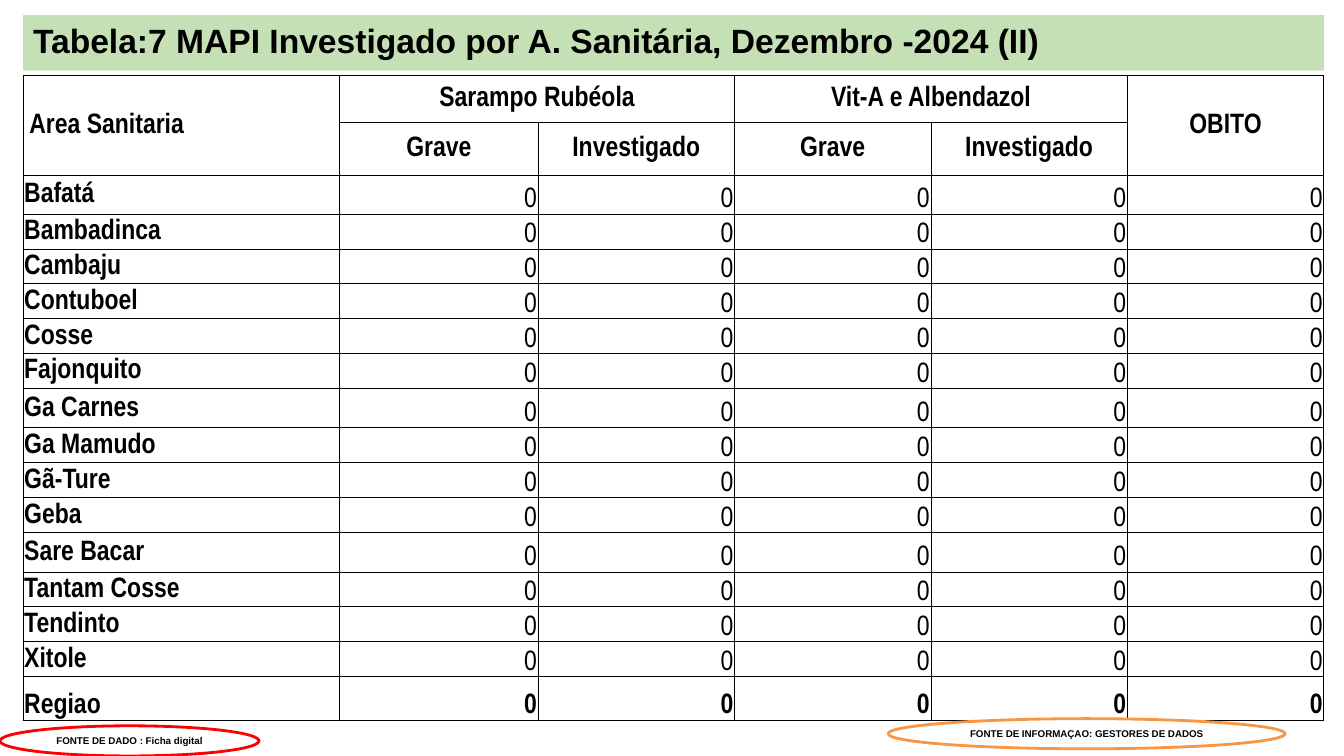
"""Build the slide with the table of investigated cases by health area."""
from lxml import etree
from pptx import Presentation
from pptx.dml.color import RGBColor
from pptx.enum.shapes import MSO_SHAPE
from pptx.enum.text import MSO_ANCHOR, MSO_AUTO_SIZE, PP_ALIGN
from pptx.oxml.ns import qn
from pptx.util import Cm, Pt

LEFT, CENTER, RIGHT = PP_ALIGN.LEFT, PP_ALIGN.CENTER, PP_ALIGN.RIGHT
MIDDLE, BOTTOM = MSO_ANCHOR.MIDDLE, MSO_ANCHOR.BOTTOM
OVAL = MSO_SHAPE.OVAL

BLACK, WHITE, GREEN = "000000", "FFFFFF", "C5E0B4"
TITLE = "Tabela:7 MAPI Investigado por A. Sanitária, Dezembro -2024 (II)"
HEADERS = [
    ["Area Sanitaria", "Sarampo Rubéola", None, "Vit-A e Albendazol", None, "OBITO"],
    [None, "Grave", "Investigado", "Grave", "Investigado", None],
]
MERGES = [((0, 0), (1, 0)), ((0, 1), (0, 2)), ((0, 3), (0, 4)), ((0, 5), (1, 5))]
AREAS = ["Bafatá", "Bambadinca", "Cambaju", "Contuboel", "Cosse", "Fajonquito",
         "Ga Carnes", "Ga Mamudo", "Gã-Ture", "Geba", "Sare Bacar",
         "Tantam Cosse", "Tendinto", "Xitole"]
TOTAL = "Regiao"
COUNTS = {area: [0] * 5 for area in AREAS + [TOTAL]}
SOURCES = [
    ("FONTE DE DADO : Ficha digital", 0, 18.29, 6.53, "FF0000", None),
    ("FONTE DE INFORMAÇAO: GESTORES DE DADOS", 22.38, 18.11, 10.01, "F79646", WHITE),
]

MARGIN, CONTENT_WIDTH = 0.58, 32.79
COLUMN_WIDTHS = [7.98, 5] + [4.95] * 4
HEADER_HEIGHTS = [1.17, 1.35]
AREA_HEIGHT, TOTAL_HEIGHT = 0.88, 1.09
TALLER_AREAS = {"Bafatá": 0.97, "Ga Carnes": 0.99, "Sare Bacar": 0.99}


def color(code):
    return RGBColor.from_string(code)


def write(frame, text, size, font, align, bold=True):
    para = frame.paragraphs[0]
    para.alignment = align
    span = para.add_run()
    span.text = text
    span.font.size, span.font.name, span.font.bold = Pt(size), font, bold
    span.font.color.rgb = color(BLACK)
    return para


def style_cell(cell):
    cell.margin_left = cell.margin_right = cell.margin_top = Cm(0.03)
    cell.margin_bottom = 0
    properties = cell._tc.get_or_add_tcPr()
    for side in ("a:lnL", "a:lnR", "a:lnT", "a:lnB"):
        line = etree.SubElement(properties, qn(side), w=str(Pt(0.5)))
        fill = etree.SubElement(line, qn("a:solidFill"))
        etree.SubElement(fill, qn("a:srgbClr"), val=BLACK)
    cell.fill.solid()
    cell.fill.fore_color.rgb = color(WHITE)


def fill_cell(cell, text, align, anchor, bold=True):
    cell.vertical_anchor = anchor
    write(cell.text_frame, text, 20, "Arial Narrow", align, bold)


def add_title(page):
    box = page.shapes.title
    box.left, box.top = Cm(MARGIN), Cm(0.38)
    box.width, box.height = Cm(CONTENT_WIDTH), Cm(1.4)
    box.fill.solid()
    box.fill.fore_color.rgb = color(GREEN)
    frame = box.text_frame
    frame.auto_size = MSO_AUTO_SIZE.NONE
    frame.vertical_anchor = MIDDLE
    write(frame, TITLE, 24, "Arial", LEFT).line_spacing = 0.9


def add_case_table(page):
    heights = HEADER_HEIGHTS + [TALLER_AREAS.get(area, AREA_HEIGHT) for area in AREAS]
    heights.append(TOTAL_HEIGHT)
    table = page.shapes.add_table(
        len(heights), len(COLUMN_WIDTHS), Cm(MARGIN), Cm(1.9),
        Cm(CONTENT_WIDTH), Cm(sum(heights))).table
    table.first_row = table.horz_banding = False
    for column, width in zip(table.columns, COLUMN_WIDTHS):
        column.width = Cm(width)
    for row, height in zip(table.rows, heights):
        row.height = Cm(height)
    for cell in table.iter_cells():
        style_cell(cell)
    for start, end in MERGES:
        table.cell(*start).merge(table.cell(*end))
    for row, labels in enumerate(HEADERS):
        for column, label in enumerate(labels):
            if label:
                align = CENTER if column else LEFT
                fill_cell(table.cell(row, column), label, align, MIDDLE)
    table.cell(0, 0).margin_left = Cm(0.16)
    for row, (area, counts) in enumerate(COUNTS.items(), len(HEADERS)):
        is_total = area == TOTAL
        fill_cell(table.cell(row, 0), area, LEFT, BOTTOM if is_total else MIDDLE)
        for column, count in enumerate(counts, 1):
            fill_cell(table.cell(row, column), str(count), RIGHT, BOTTOM, is_total)


def add_source(page, text, left, top, width, outline, fill):
    oval = page.shapes.add_shape(OVAL, Cm(left), Cm(top), Cm(width), Cm(0.76))
    oval.shadow.inherit = False
    if fill:
        oval.fill.solid()
        oval.fill.fore_color.rgb = color(fill)
    else:
        oval.fill.background()
    oval.line.color.rgb = color(outline)
    oval.line.width = Pt(2)
    frame = oval.text_frame
    frame.word_wrap = False
    frame.margin_top = frame.margin_bottom = 0
    frame.vertical_anchor = MIDDLE
    write(frame, text, 7, "Arial", CENTER)


def main():
    deck = Presentation()
    deck.slide_width, deck.slide_height = Cm(33.87), Cm(19.05)
    page = deck.slides.add_slide(deck.slide_layouts[5])
    add_title(page)
    add_case_table(page)
    for source in SOURCES:
        add_source(page, *source)
    deck.save("out.pptx")


if __name__ == "__main__":
    main()
